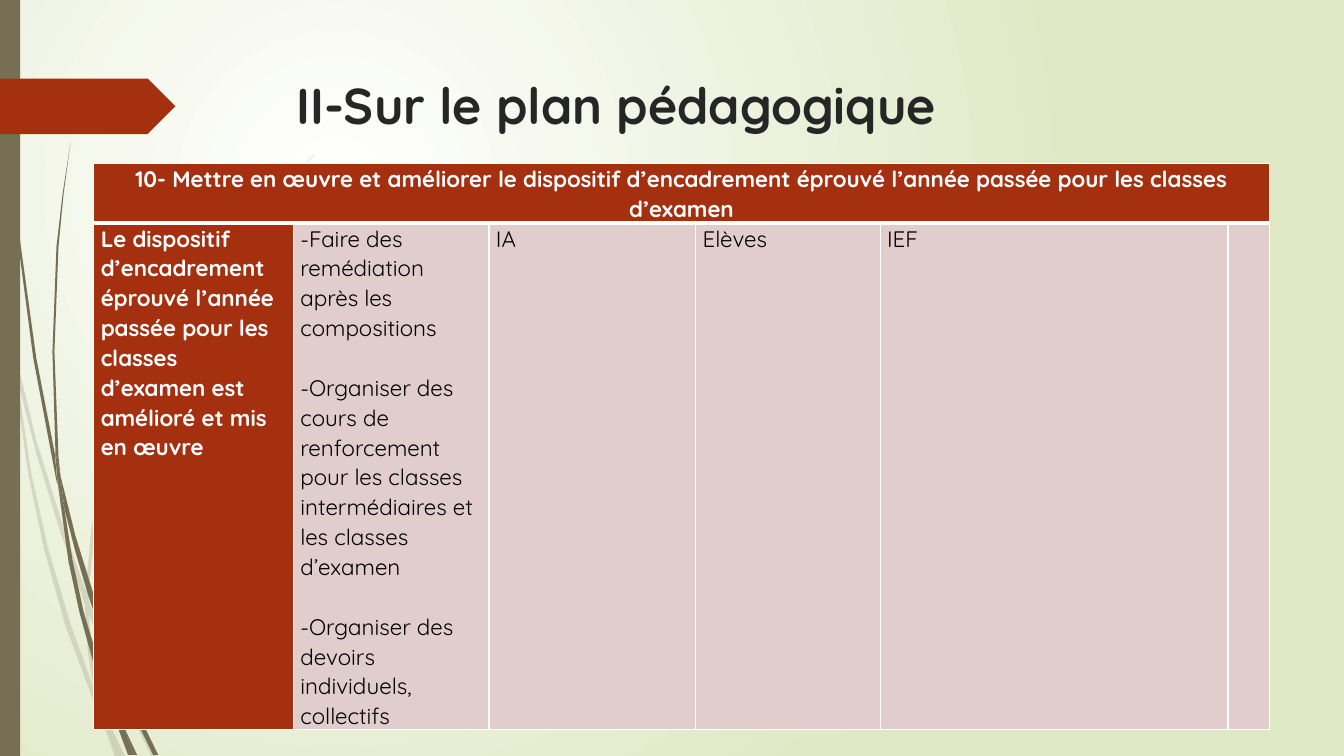
from dataclasses import dataclass

from lxml import etree
from pptx import Presentation
from pptx.dml.color import RGBColor
from pptx.enum.shapes import MSO_SHAPE
from pptx.enum.text import MSO_ANCHOR, PP_ALIGN
from pptx.oxml.ns import qn
from pptx.util import Inches, Pt

RECT = MSO_SHAPE.RECTANGLE
PENTAGON = MSO_SHAPE.PENTAGON
TOP = MSO_ANCHOR.TOP
LEFT, CENTER = PP_ALIGN.LEFT, PP_ALIGN.CENTER


@dataclass(frozen=True)
class Theme:
    font: str = "Quicksand"
    title_size: int = 36
    body_size: int = 16
    line_spacing: float = 1.07
    blank_line: float = 21.4
    white: str = "FFFFFF"
    black: str = "000000"
    title: str = "262626"
    glow: str = "DFE8C4"
    olive: str = "766F54"
    rust: str = "A53010"
    rose: str = "E1CDCC"


PALE_WISPS = [
    [(0.11, 3.5), (0.09, 3.22), (0, 2.82), (0, 2.99), (0.1, 3.44)],
    [(0.58, 5.22), (0.84, 5.99), (0.85, 5.86), (0.62, 5.2), (0.36, 4.37),
     (0.14, 3.45), (0.17, 3.76), (0.36, 4.5)],
    [(0.92, 6.07), (0.88, 5.96), (0.88, 6.1), (1.23, 6.94), (1.5, 7.5),
     (1.55, 7.5), (1.27, 6.92)],
    [(1.19, 7.5), (1.24, 7.5), (1.05, 7.11)],
    [(0.93, 6.83), (0.7, 6.19), (0.48, 5.45), (0.31, 4.69), (0.17, 3.76),
     (0.11, 3.5), (0.28, 4.7), (0.44, 5.46), (0.65, 6.21), (0.92, 6.93),
     (1.01, 7.14), (0.99, 7.07)],
    [(0.84, 5.99), (0.87, 6.46), (0.93, 6.83), (0.96, 6.92), (1.05, 7.11),
     (1.03, 7.06), (0.91, 6.46), (0.88, 6.1), (0.88, 6.08)],
    [(0.88, 5.84), (0.95, 5.22), (1.1, 4.62), (1.33, 4.04), (1.6, 3.49),
     (1.93, 2.95), (2.29, 2.45), (2.68, 1.98), (2.9, 1.75), (3.12, 1.54),
     (3.12, 1.53), (2.89, 1.75), (2.68, 1.97), (2.28, 2.44), (1.91, 2.94),
     (1.58, 3.48), (1.3, 4.03), (1.07, 4.61), (0.91, 5.22), (0.85, 5.84),
     (0.85, 5.86), (0.88, 5.96)],
    [(1.01, 7.14), (1.14, 7.5), (1.19, 7.5)],
    [(0.88, 6.08), (0.88, 6.1), (0.88, 5.96), (0.85, 5.86), (0.84, 5.99)],
    [(0.96, 6.92), (0.93, 6.83), (0.99, 7.07), (1.01, 7.14), (1.19, 7.5),
     (1.05, 7.11)],
]
DARK_WISPS = [
    [(0.07, 1.1), (0.17, 2.33), (0.33, 3.55), (0.56, 4.77), (0.57, 4.81),
     (0.55, 4.57), (0.55, 4.53), (0.36, 3.55), (0.19, 2.32), (0.08, 1.09),
     (0.05, 0.48), (0.04, 0), (0.03, 0), (0.04, 0.48)],
    [(0.88, 5.92), (1.06, 6.45), (1.06, 6.31), (0.93, 5.9), (0.75, 5.32),
     (0.6, 4.72), (0.64, 5.05), (0.75, 5.48)],
    [(1.13, 6.49), (1.1, 6.41), (1.11, 6.56), (1.32, 7.08), (1.52, 7.49),
     (1.57, 7.49), (1.36, 7.06)],
    [(1.1, 6.91), (0.98, 6.57), (0.83, 6.07), (0.72, 5.56), (0.64, 5.05),
     (0.57, 4.77), (0.68, 5.57), (0.79, 6.08), (0.93, 6.59), (1.11, 7.08),
     (1.17, 7.22), (1.16, 7.17)],
    [(0.6, 4.72), (0.58, 4.53), (0.54, 3.49), (0.58, 2.45), (0.63, 1.93),
     (0.7, 1.41), (0.62, 1.93), (0.56, 2.45), (0.52, 3.49), (0.55, 4.49)],
    [(1.33, 7.49), (1.36, 7.49), (1.22, 7.19)],
    [(0.57, 4.77), (0.64, 5.05), (0.6, 4.72), (0.55, 4.49), (0.55, 4.53)],
    [(1.11, 6.33), (1.15, 5.92), (1.25, 5.52), (1.4, 5.13), (1.58, 4.76),
     (1.8, 4.4), (2.05, 4.06), (2.31, 3.74), (2.45, 3.59), (2.61, 3.44),
     (2.6, 3.44), (2.45, 3.58), (2.31, 3.73), (2.04, 4.05), (1.78, 4.39),
     (1.56, 4.74), (1.37, 5.12), (1.22, 5.51), (1.11, 5.91), (1.06, 6.31),
     (1.1, 6.41)],
    [(1.17, 7.22), (1.27, 7.49), (1.31, 7.49)],
    [(1.06, 6.45), (1.1, 6.91), (1.16, 7.06), (1.22, 7.19), (1.21, 7.16),
     (1.11, 6.56), (1.09, 6.51)],
    [(1.06, 6.45), (1.09, 6.51), (1.11, 6.56), (1.1, 6.41), (1.06, 6.31)],
    [(1.16, 7.06), (1.1, 6.91), (1.16, 7.17), (1.17, 7.22), (1.3, 7.49),
     (1.33, 7.49), (1.22, 7.19)],
]
HEADING = ("10- Mettre en œuvre et améliorer le dispositif d’encadrement "
           "éprouvé l’année passée pour les classes d’examen")
RESULT = ("Le dispositif d’encadrement éprouvé l’année passée pour les "
          "classes d’examen est amélioré et mis en œuvre")
ACTIONS = [
    "-Faire des remédiation après les compositions",
    "-Organiser des cours de renforcement pour les classes intermédiaires "
    "et les classes d’examen",
    "-Organiser des devoirs individuels, collectifs",
]
COLUMNS = [1.98, 1.94, 2.05, 1.83, 3.45, 0.41]
ROWS = [0.59, 5.03]


class Deck:
    def __init__(self, theme):
        self.theme = theme
        self.prs = Presentation()
        self.prs.slide_width = Inches(13.33)
        self.prs.slide_height = Inches(7.5)
        self.slide = self.prs.slides.add_slide(self.prs.slide_layouts[6])

    def background(self, inner, outer):
        fill = self.slide.background.fill
        fill.gradient()
        for stop, color in zip(fill.gradient_stops, (inner, outer)):
            stop.color.rgb = RGBColor.from_string(color)
        lin = next(self.slide.element.iter(qn("a:lin")))
        shade = etree.Element(qn("a:path"), path="circle")
        etree.SubElement(shade, qn("a:fillToRect"),
                         l="50000", t="50000", r="100000", b="100000")
        lin.getparent().replace(lin, shade)

    def paint(self, sp, color, alpha=100):
        sp.shadow.inherit = False
        sp.line.fill.background()
        sp.fill.solid()
        sp.fill.fore_color.rgb = RGBColor.from_string(color)
        if alpha < 100:
            clr = next(sp._element.spPr.iter(qn("a:srgbClr")))
            etree.SubElement(clr, qn("a:alpha"), val=str(alpha * 1000))

    def wisp(self, points, color, alpha=100):
        start, *others = [(Inches(x), Inches(y)) for x, y in points]
        builder = self.slide.shapes.build_freeform(*start)
        builder.add_line_segments(others)
        self.paint(builder.convert_to_shape(), color, alpha)

    def shape(self, kind, box, color):
        sp = self.slide.shapes.add_shape(kind, *map(Inches, box))
        self.paint(sp, color)

    def style(self, p, size, color, bold):
        p.font.name = self.theme.font
        p.font.size = Pt(size)
        p.font.bold = bold
        p.font.color.rgb = RGBColor.from_string(color)

    def title(self, text, box):
        tf = self.slide.shapes.add_textbox(*map(Inches, box)).text_frame
        tf.word_wrap = True
        tf.vertical_anchor = TOP
        tf.text = text
        self.style(tf.paragraphs[0], self.theme.title_size, self.theme.title, True)

    def table(self, box, columns, rows):
        frame = self.slide.shapes.add_table(len(rows), len(columns), *map(Inches, box))
        table = frame.table
        table.first_row = table.horz_banding = False
        for column, width in zip(table.columns, columns):
            column.width = Inches(width)
        for row, height in zip(table.rows, rows):
            row.height = Inches(height)
        return table

    def cell(self, cell, lines, fill, color, bold=False, align=LEFT, top=1, bottom=1):
        cell.margin_left = cell.margin_right = Inches(0.07)
        cell.margin_top = cell.margin_bottom = 0
        for side, width in (("L", 1), ("R", 1), ("T", top), ("B", bottom)):
            ln = etree.SubElement(cell._tc.get_or_add_tcPr(), qn(f"a:ln{side}"),
                                  w=str(Pt(width)))
            solid = etree.SubElement(ln, qn("a:solidFill"))
            etree.SubElement(solid, qn("a:srgbClr"), val=self.theme.white)
        cell.fill.solid()
        cell.fill.fore_color.rgb = RGBColor.from_string(fill)
        cell.text = "\n".join(lines)
        for i, p in enumerate(cell.text_frame.paragraphs):
            p.alignment = align
            p.line_spacing = self.theme.line_spacing
            p.space_before = Pt(self.theme.blank_line if i else 0)
            self.style(p, self.theme.body_size, color, bold)


def main():
    th = Theme()
    deck = Deck(th)
    deck.background(th.white, th.glow)
    for wisps, alpha in ((PALE_WISPS, 20), (DARK_WISPS, 100)):
        for points in wisps:
            deck.wisp(points, th.olive, alpha)
    deck.shape(RECT, (0, 0, 0.2, 7.5), th.olive)
    deck.shape(PENTAGON, (0, 0.78, 1.74, 0.55), th.rust)
    deck.title("II-Sur le plan pédagogique", (2.84, 0.69, 9.75, 1.4))

    table = deck.table((0.93, 1.62, sum(COLUMNS), sum(ROWS)), COLUMNS, ROWS)
    table.cell(0, 0).merge(table.cell(0, len(COLUMNS) - 1))
    for i in range(len(COLUMNS)):
        deck.cell(table.cell(0, i), [] if i else [HEADING], th.rust, th.white,
                  True, CENTER, bottom=3)
    deck.cell(table.cell(1, 0), [RESULT], th.rust, th.white, True, top=3)
    for i, lines in enumerate([ACTIONS, ["IA"], ["Elèves"], ["IEF"], []], 1):
        deck.cell(table.cell(1, i), lines, th.rose, th.black, top=3)
    deck.prs.save("out.pptx")


if __name__ == "__main__":
    main()
